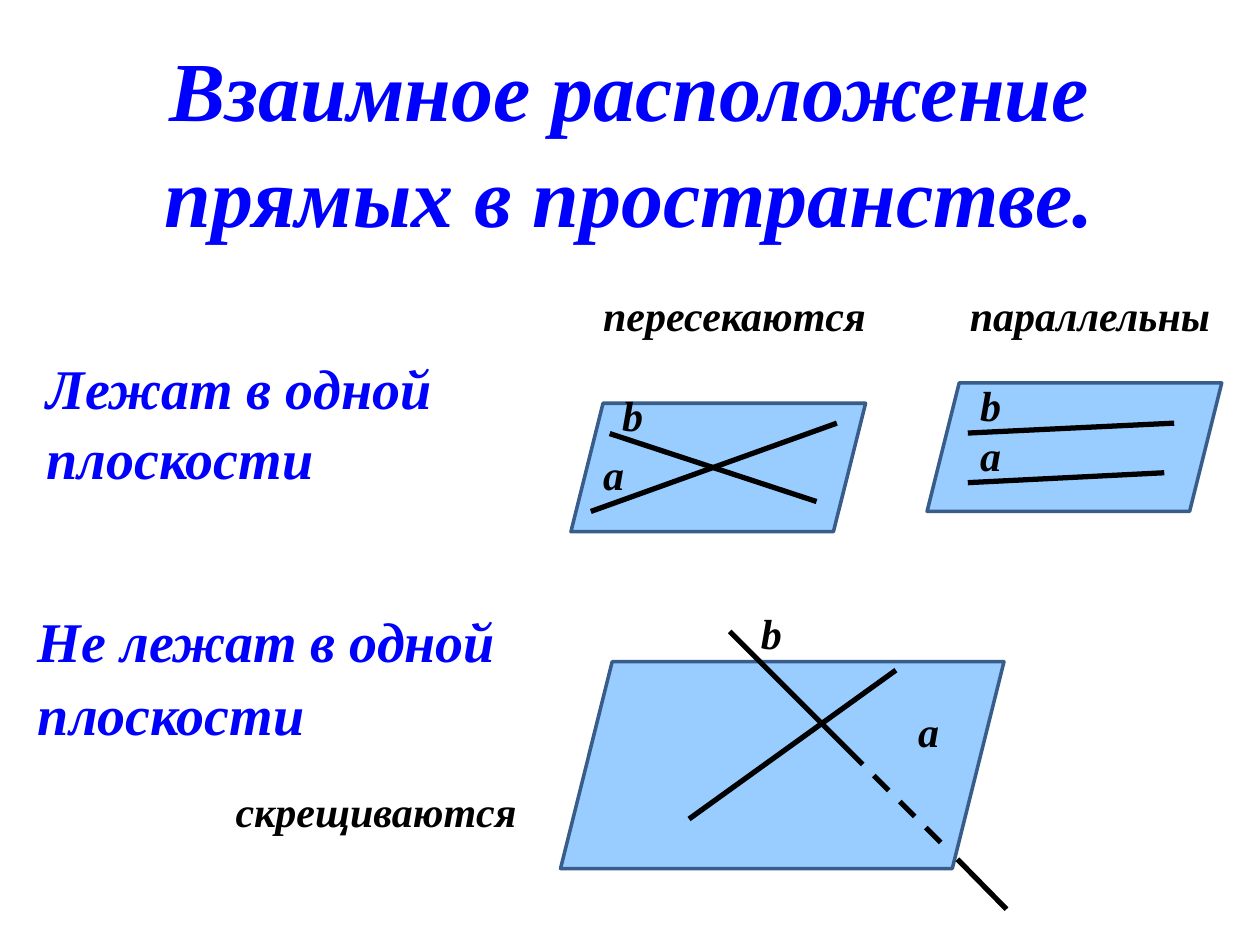
import pptx
import pptx.util
import pptx.dml.color
import pptx.enum.dml
import pptx.enum.shapes
import pptx.enum.text
from dataclasses import dataclass
from lxml import etree
from pptx.util import Cm, Pt


@dataclass(frozen=True)
class Theme:
    font: str = "Times New Roman"
    heading: str = "0000FF"
    ink: str = "000000"
    plane: str = "99CCFF"
    plane_edge: str = "385D8A"
    title_size: int = 48
    gap_size: int = 40
    body_size: int = 32
    label_size: int = 24


def color(value):
    return pptx.dml.color.RGBColor.from_string(value)


class SlideBuilder:
    def __init__(self, slide, theme):
        self.slide = slide
        self.theme = theme

    def format_run(self, run, size, ink):
        formats = {"name": self.theme.font, "size": Pt(size), "bold": True, "italic": True}
        for name, value in formats.items():
            setattr(run.font, name, value)
        run.font.color.rgb = color(ink)

    def format_frame(self, frame, wrap=True):
        formats = {
            "word_wrap": wrap,
            "auto_size": pptx.enum.text.MSO_AUTO_SIZE.NONE,
            "vertical_anchor": pptx.enum.text.MSO_ANCHOR.TOP,
        }
        for name, value in formats.items():
            setattr(frame, name, value)

    def placeholder(self, index, box, runs, alignment):
        """Fill a template placeholder with one paragraph of (text, size) runs."""
        shape = self.slide.placeholders[index]
        for name, value in zip(("left", "top", "width", "height"), box):
            setattr(shape, name, Cm(value))
        self.format_frame(shape.text_frame)
        paragraph = shape.text_frame.paragraphs[0]
        formats = {"alignment": alignment, "line_spacing": 1.05, "space_before": Pt(2)}
        for name, value in formats.items():
            setattr(paragraph, name, value)
        # Plain paragraph without bullet or hanging indent
        properties = paragraph._p.get_or_add_pPr()
        properties.set("marL", "0")
        properties.set("indent", "0")
        etree.SubElement(properties, pptx.oxml.ns.qn("a:buNone"))
        for text, size in runs:
            run = paragraph.add_run()
            run.text = text
            self.format_run(run, size, self.theme.heading)

    def label(self, text, left, top, width):
        shape = self.slide.shapes.add_textbox(Cm(left), Cm(top), Cm(width), Cm(1.27))
        self.format_frame(shape.text_frame)
        run = shape.text_frame.paragraphs[0].add_run()
        run.text = text
        self.format_run(run, self.theme.label_size, self.theme.ink)

    def plane(self, left, top, width, height):
        shape = self.slide.shapes.add_shape(
            pptx.enum.shapes.MSO_SHAPE.PARALLELOGRAM,
            Cm(left), Cm(top), Cm(width), Cm(height))
        shape.shadow.inherit = False
        shape.adjustments[0] = 0.25
        shape.fill.solid()
        shape.fill.fore_color.rgb = color(self.theme.plane)
        shape.line.color.rgb = color(self.theme.plane_edge)
        shape.line.width = Pt(2)

    def line(self, start, end, dashed=False):
        connector = self.slide.shapes.add_connector(
            pptx.enum.shapes.MSO_CONNECTOR.STRAIGHT, *map(Cm, start + end))
        connector.line.color.rgb = color(self.theme.ink)
        connector.line.width = Pt(3)
        if dashed:
            connector.line.dash_style = pptx.enum.dml.MSO_LINE.DASH
        etree.SubElement(connector._element.spPr, pptx.oxml.ns.qn("a:effectLst"))


def main():
    presentation = pptx.Presentation()
    presentation.slide_width = Cm(25.4)
    presentation.slide_height = Cm(19.05)
    theme = Theme()
    slide = presentation.slides.add_slide(presentation.slide_layouts.get_by_name("Two Content"))
    builder = SlideBuilder(slide, theme)
    align = pptx.enum.text.PP_ALIGN

    # Title and the two cases
    builder.placeholder(0, (0.89, 0.53, 23.6, 4.32),
                        [("Взаимное расположение прямых в пространстве.", theme.title_size)],
                        align.CENTER)
    builder.placeholder(1, (0.69, 6.93, 11.61, 2.97),
                        [("Лежат в одной плоскости", theme.body_size)], align.LEFT)
    builder.placeholder(2, (0.51, 11.73, 11.81, 3.3),
                        [("Не лежат в одной", theme.body_size), (" ", theme.gap_size),
                         ("плоскости", theme.body_size)], align.LEFT)

    # Intersecting lines
    builder.plane(11.51, 8.13, 5.94, 2.59)
    builder.line((12.29, 8.74), (16.46, 10.11))
    builder.line((16.87, 8.53), (11.91, 10.31))

    # Parallel lines
    builder.plane(18.69, 7.72, 5.94, 2.59)
    builder.line((23.67, 8.53), (19.51, 8.73))
    builder.line((23.47, 9.53), (19.51, 9.73))

    # Skew lines: b passes behind the plane where dashed
    builder.plane(11.3, 13.34, 8.94, 4.17)
    builder.line((18.06, 13.51), (13.89, 16.51))
    builder.line((14.71, 12.73), (17.09, 15.11))
    builder.line((17.09, 15.11), (19.1, 17.12), dashed=True)
    builder.line((19.3, 17.32), (20.29, 18.33))

    # Captions and line names
    for text, left, top, width in (
            ("пересекаются", 11.91, 5.72, 6.4),
            ("параллельны", 19.3, 5.72, 5.41),
            ("скрещиваются", 4.5, 15.72, 6.53),
            ("а", 11.91, 8.92, 1.19),
            ("b", 12.29, 7.72, 1.19),
            ("а", 19.51, 8.53, 1.19),
            ("b", 19.51, 7.52, 1.19),
            ("а", 18.26, 14.1, 1.24),
            ("b", 15.09, 12.12, 1.19)):
        builder.label(text, left, top, width)

    presentation.save("out.pptx")


if __name__ == "__main__":
    main()
